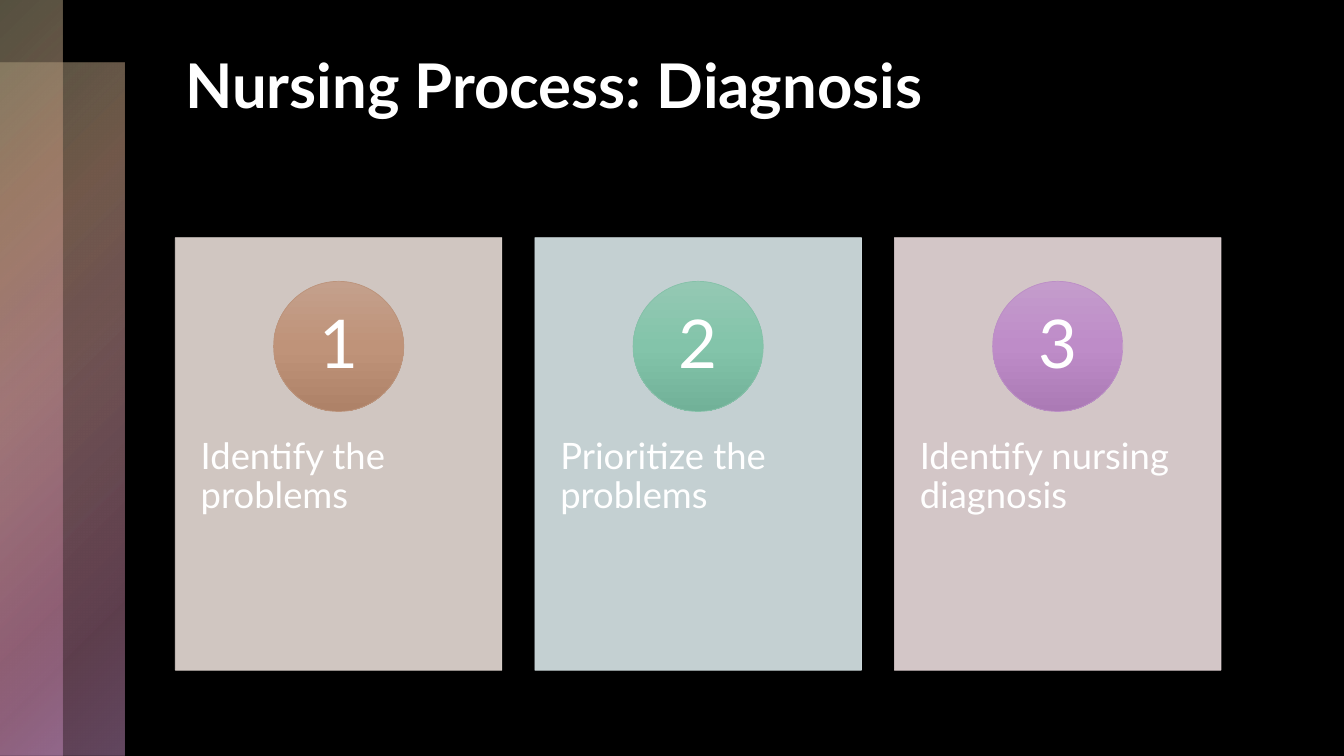
import lxml.etree
import pptx
import pptx.dml.color
import pptx.enum.shapes
import pptx.enum.text
import pptx.oxml.ns
import pptx.util

Cm = pptx.util.Cm
Pt = pptx.util.Pt
RGBColor = pptx.dml.color.RGBColor
Shapes = pptx.enum.shapes.MSO_SHAPE
Align = pptx.enum.text.PP_ALIGN
Anchor = pptx.enum.text.MSO_ANCHOR
qn = pptx.oxml.ns.qn

BLACK = RGBColor(0x00, 0x00, 0x00)
WHITE = RGBColor(0xFF, 0xFF, 0xFF)
OLIVE = RGBColor(0xAA, 0xA1, 0x7E)
TAN = RGBColor(0xBC, 0x94, 0x7C)
ROSE = RGBColor(0xC8, 0x94, 0x97)
PINK = RGBColor(0xBC, 0x7C, 0x9A)
ORCHID = RGBColor(0xC5, 0x8E, 0xBF)
SAND_CARD = RGBColor(0xE7, 0xDC, 0xD7)
MINT_CARD = RGBColor(0xDA, 0xE7, 0xE9)
BLUSH_CARD = RGBColor(0xEB, 0xDC, 0xDD)
SAND_BADGE = (RGBColor(0xC4, 0xA0, 0x8C), RGBColor(0xBF, 0x93, 0x79), RGBColor(0xAE, 0x82, 0x68))
MINT_BADGE = (RGBColor(0x94, 0xC8, 0xB3), RGBColor(0x83, 0xC4, 0xAA), RGBColor(0x71, 0xB1, 0x98))
PLUM_BADGE = (RGBColor(0xC4, 0x9C, 0xCC), RGBColor(0xBE, 0x8C, 0xC8), RGBColor(0xAB, 0x7A, 0xB5))
MINT_EDGE = RGBColor(0x86, 0xC1, 0xA9)
PLUM_EDGE = RGBColor(0xBC, 0x8F, 0xC6)

FONT = "Lato"
BAR_STOPS = ((0, OLIVE, 50), (25, TAN, 60), (50, ROSE, 55), (81, PINK, 50), (99, ORCHID, 50))
STEPS = (
    ("Identify the problems", SAND_CARD, SAND_BADGE, TAN),
    ("Prioritize the problems", MINT_CARD, MINT_BADGE, MINT_EDGE),
    ("Identify nursing diagnosis", BLUSH_CARD, PLUM_BADGE, PLUM_EDGE),
)
CARD_LEFT, CARD_TOP, CARD_WIDTH, CARD_HEIGHT = 4.42, 5.99, 8.23, 10.9
CARD_PITCH = 9.06
BADGE_SIZE, BADGE_DROP = 3.28, 1.1
NUMBER_SIZE = 2.32
CAPTION_TOP, CAPTION_HEIGHT = 10.13, 6.55


def add_child(parent, tag, **attributes):
    return lxml.etree.SubElement(parent, qn(tag), attributes)


def set_alpha(color, percent):
    add_child(color, "a:alpha", val=str(percent * 1000))


def set_gradient(shape, stops, radial=False):
    shape.fill.background()
    properties = shape.element.spPr
    gradient = lxml.etree.Element(qn("a:gradFill"), rotWithShape="1")
    stop_list = add_child(gradient, "a:gsLst")
    for position, color, alpha in stops:
        stop = add_child(stop_list, "a:gs", pos=str(position * 1000))
        set_alpha(add_child(stop, "a:srgbClr", val=str(color)), alpha)
    if radial:
        route = add_child(gradient, "a:path", path="circle")
        add_child(route, "a:fillToRect", r="100000", b="100000")
    else:
        add_child(gradient, "a:lin", ang="5400000", scaled="0")
    properties.replace(properties.find(qn("a:noFill")), gradient)


def add_figure(page, kind, left, top, width, height, edge=None):
    shape = page.shapes.add_shape(kind, Cm(left), Cm(top), Cm(width), Cm(height))
    shape.shadow.inherit = False
    if edge is None:
        shape.line.fill.background()
    else:
        shape.line.color.rgb = edge
        shape.line.width = Pt(0.5)
    return shape


def add_bar(page, top, width, height):
    bar = add_figure(page, Shapes.RECTANGLE, 0, top, width, height)
    set_gradient(bar, BAR_STOPS, radial=True)


def add_text(page, text, left, top, width, height, size, inset_x, inset_y,
             anchor=Anchor.TOP, align=Align.LEFT, bold=False):
    box = page.shapes.add_textbox(Cm(left), Cm(top), Cm(width), Cm(height))
    frame = box.text_frame
    frame.word_wrap = True
    frame.vertical_anchor = anchor
    frame.margin_left = frame.margin_right = Cm(inset_x)
    frame.margin_top = frame.margin_bottom = Cm(inset_y)
    frame.text = text
    para = frame.paragraphs[0]
    para.alignment = align
    para.line_spacing = 0.9
    font = para.runs[0].font
    font.name, font.size, font.bold = FONT, Pt(size), bold
    font.color.rgb = WHITE


def add_card(page, left, color):
    card = add_figure(page, Shapes.RECTANGLE, left, CARD_TOP, CARD_WIDTH, CARD_HEIGHT, color)
    card.fill.solid()
    card.fill.fore_color.rgb = color
    for tint in card.element.spPr.iter(qn("a:srgbClr")):
        set_alpha(tint, 90)


def add_badge(page, number, card_left, colors, edge):
    left = card_left + (CARD_WIDTH - BADGE_SIZE) / 2
    top = CARD_TOP + BADGE_DROP
    badge = add_figure(page, Shapes.OVAL, left, top, BADGE_SIZE, BADGE_SIZE, edge)
    set_gradient(badge, [(50 * i, color, 100) for i, color in enumerate(colors)])
    inset = (BADGE_SIZE - NUMBER_SIZE) / 2
    add_text(page, str(number), left + inset, top + inset, NUMBER_SIZE, NUMBER_SIZE,
             48, 0.25, 0.03, Anchor.MIDDLE, Align.CENTER)


def add_step(page, index, caption, card_color, badge_colors, edge):
    left = CARD_LEFT + index * CARD_PITCH
    add_card(page, left, card_color)
    add_text(page, caption, left, CAPTION_TOP, CARD_WIDTH, CAPTION_HEIGHT, 26, 0.64, 0.91)
    add_badge(page, index + 1, left, badge_colors, edge)


def main():
    deck = pptx.Presentation()
    deck.slide_width, deck.slide_height = Cm(33.87), Cm(19.05)
    page = deck.slides.add_slide(deck.slide_layouts[6])
    page.background.fill.solid()
    page.background.fill.fore_color.rgb = BLACK
    add_bar(page, 1.57, 3.15, 17.48)
    add_bar(page, 0, 1.57, 19.05)
    add_text(page, "Nursing Process: Diagnosis", CARD_LEFT, 1.27, 25.72, 4.32,
             44, 0.25, 0.13, bold=True)
    for index, step in enumerate(STEPS):
        add_step(page, index, *step)
    deck.save("out.pptx")


if __name__ == "__main__":
    main()
